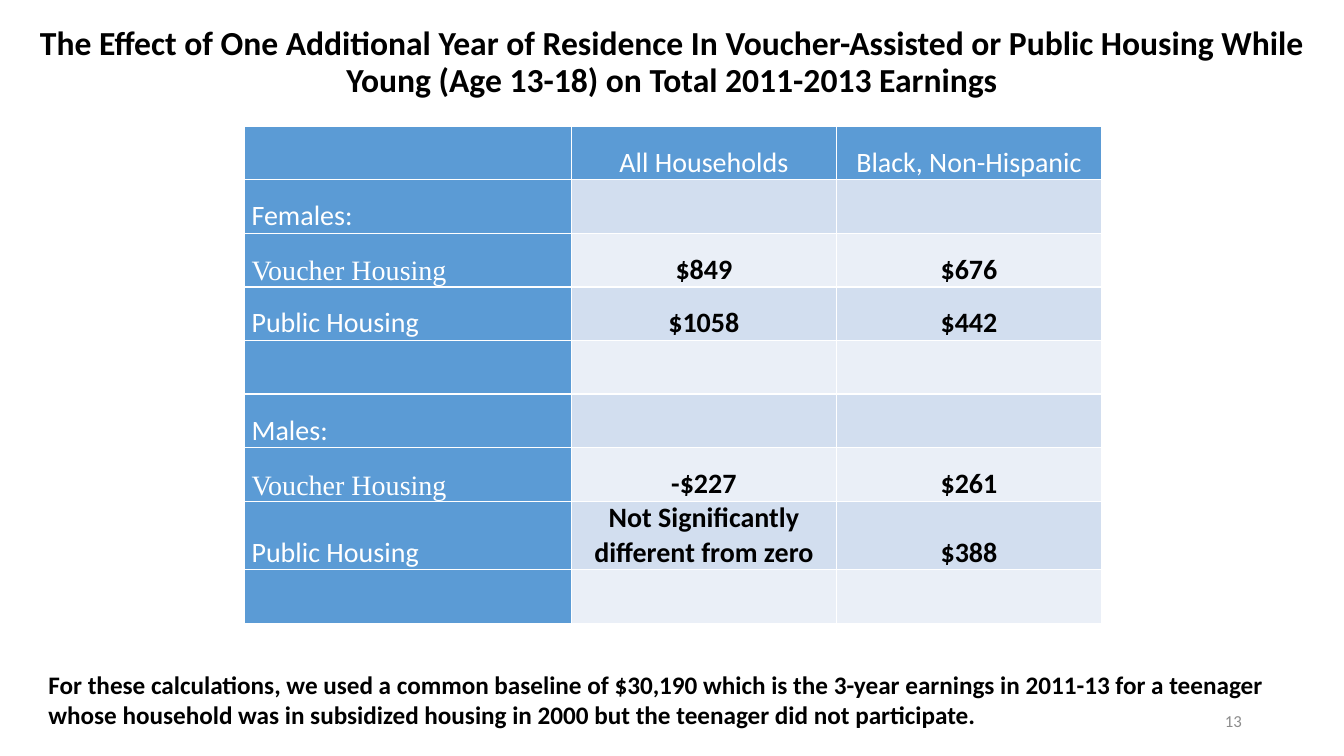
from typing import NamedTuple

from lxml import etree
from pptx import Presentation
from pptx.dml.color import RGBColor
from pptx.enum.text import MSO_ANCHOR, MSO_AUTO_SIZE, PP_ALIGN
from pptx.oxml.ns import qn
from pptx.util import Cm, Pt

LEFT, CENTER, RIGHT = PP_ALIGN.LEFT, PP_ALIGN.CENTER, PP_ALIGN.RIGHT
TOP, MIDDLE, BOTTOM = MSO_ANCHOR.TOP, MSO_ANCHOR.MIDDLE, MSO_ANCHOR.BOTTOM
NO_AUTOFIT = MSO_AUTO_SIZE.NONE

SANS, SERIF = "Calibri", "Times New Roman"
BLACK, WHITE, GRAY = "000000", "FFFFFF", "8C8C8C"
BLUE, BANDS = "5B9BD5", ("EAEFF7", "D2DEEF")

COL_WIDTHS = (8.25, 6.68, 6.68)
ROW_HEIGHT = 1.35


class Style(NamedTuple):
    size: int
    color: str = BLACK
    bold: bool = False
    align: PP_ALIGN = LEFT
    font: str = SANS


class Row(NamedTuple):
    label: str = ""
    all_households: str = ""
    black: str = ""
    label_font: str = SANS


class Note(NamedTuple):
    box: tuple[float, float, float, float]
    text: str
    style: Style
    anchor: MSO_ANCHOR
    wrap: bool


ROWS = (
    Row("", "All Households", "Black, Non-Hispanic"),
    Row("Females:"),
    Row("Voucher Housing", "$849", "$676", SERIF),
    Row("Public Housing", "$1058", "$442"),
    Row(),
    Row("Males:"),
    Row("Voucher Housing", "-$227", "$261", SERIF),
    Row("Public Housing", "Not Significantly different from zero", "$388"),
    Row(),
)

NOTES = (
    Note((23.93, 17.65, 7.62, 1.02), "13", Style(12, GRAY, align=RIGHT), MIDDLE, True),
    Note(
        (0.97, 16.74, 31.39, 1.8),
        "For these calculations, we used a common baseline of $30,190 which is "
        "the 3-year earnings in 2011-13 for a teenager\n"
        "whose household was in subsidized housing in 2000 but the teenager did not participate.",
        Style(18, bold=True), TOP, False,
    ),
)


def rgb(value: str) -> RGBColor:
    return RGBColor.from_string(value)


def write(tf, text: str, style: Style) -> None:
    tf.text = text
    for p in tf.paragraphs:
        p.alignment = style.align
        p.font.size = Pt(style.size)
        for r in p.runs:
            r.font.name = style.font
            r.font.size = Pt(style.size)
            r.font.bold = style.bold
            r.font.color.rgb = rgb(style.color)


def add_borders(cell, color: str, width: float) -> None:
    tc_pr = cell._tc.get_or_add_tcPr()
    for i, side in enumerate(("a:lnL", "a:lnR", "a:lnT", "a:lnB")):
        ln = etree.Element(qn(side), w=str(Pt(width)))
        fill = etree.SubElement(ln, qn("a:solidFill"))
        etree.SubElement(fill, qn("a:srgbClr"), val=color)
        tc_pr.insert(i, ln)


def add_title(s, text: str) -> None:
    sp = s.shapes.title
    sp.left, sp.top, sp.width, sp.height = Cm(0), Cm(0), Cm(33.87), Cm(3.18)
    tf = sp.text_frame
    tf.word_wrap = True
    tf.auto_size = NO_AUTOFIT
    tf.vertical_anchor = MIDDLE
    write(tf, text, Style(24, bold=True, align=CENTER))
    tf.paragraphs[0].line_spacing = 0.9


def add_earnings_table(s) -> None:
    frame = s.shapes.add_table(
        len(ROWS), len(COL_WIDTHS), Cm(6.15), Cm(3.18),
        Cm(sum(COL_WIDTHS)), Cm(ROW_HEIGHT * len(ROWS)),
    )
    table = frame.table
    for column, width in zip(table.columns, COL_WIDTHS):
        column.width = Cm(width)
    for i, row in enumerate(ROWS):
        table.rows[i].height = Cm(ROW_HEIGHT)
        for j, text in enumerate(row[:3]):
            cell = table.cell(i, j)
            heading = i == 0 or j == 0
            cell.fill.solid()
            cell.fill.fore_color.rgb = rgb(BLUE if heading else BANDS[i % 2])
            cell.vertical_anchor = BOTTOM
            cell.margin_left = cell.margin_right = Cm(0.19)
            cell.margin_top = cell.margin_bottom = Cm(0)
            write(cell.text_frame, text, Style(
                20, WHITE if heading else BLACK, not heading,
                CENTER if j else LEFT, SANS if j else row.label_font,
            ))
            add_borders(cell, WHITE, 1)


def add_note(s, note: Note) -> None:
    sp = s.shapes.add_textbox(*(Cm(v) for v in note.box))
    tf = sp.text_frame
    tf.word_wrap = note.wrap
    tf.vertical_anchor = note.anchor
    write(tf, note.text, note.style)


def main() -> None:
    prs = Presentation()
    prs.slide_width, prs.slide_height = Cm(33.87), Cm(19.05)
    s = prs.slides.add_slide(prs.slide_layouts[5])
    add_title(
        s,
        "The Effect of One Additional Year of Residence In Voucher-Assisted or Public "
        "Housing While Young (Age 13-18) on Total 2011-2013 Earnings",
    )
    add_earnings_table(s)
    for note in NOTES:
        add_note(s, note)
    prs.save("out.pptx")


if __name__ == "__main__":
    main()
